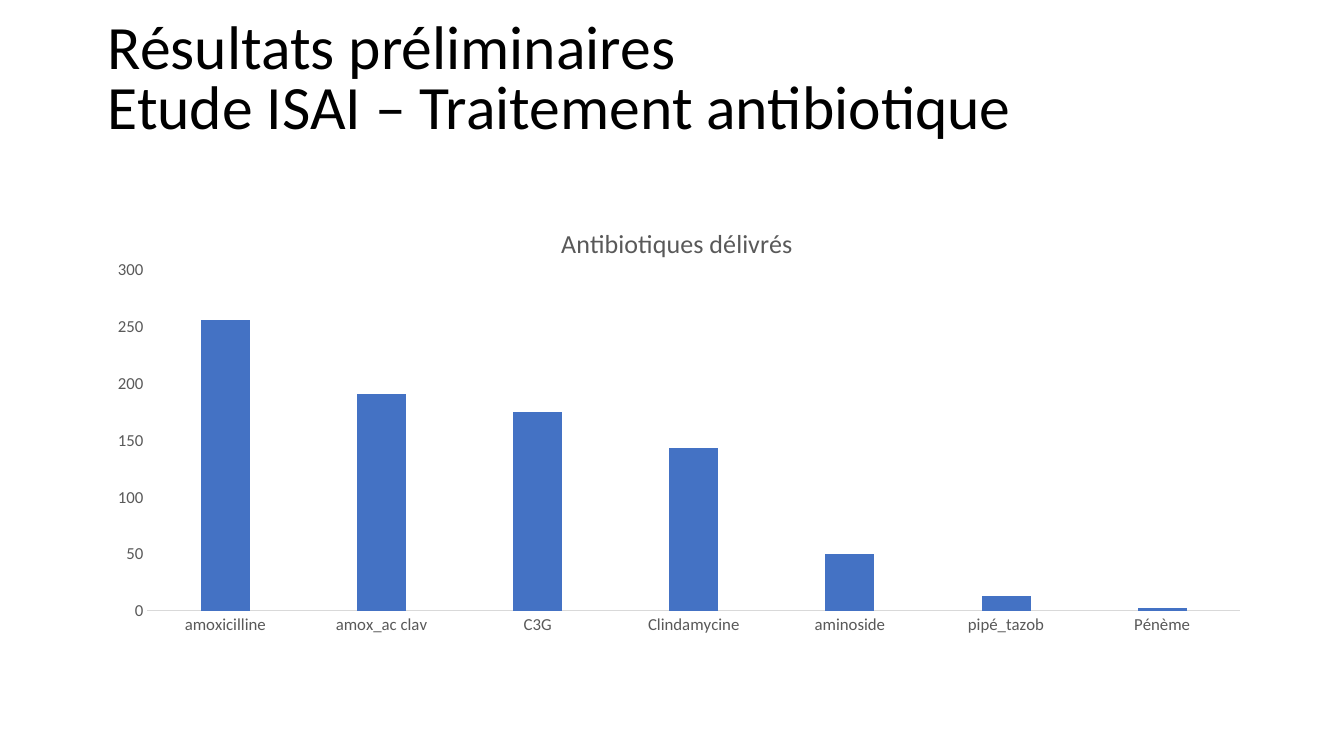
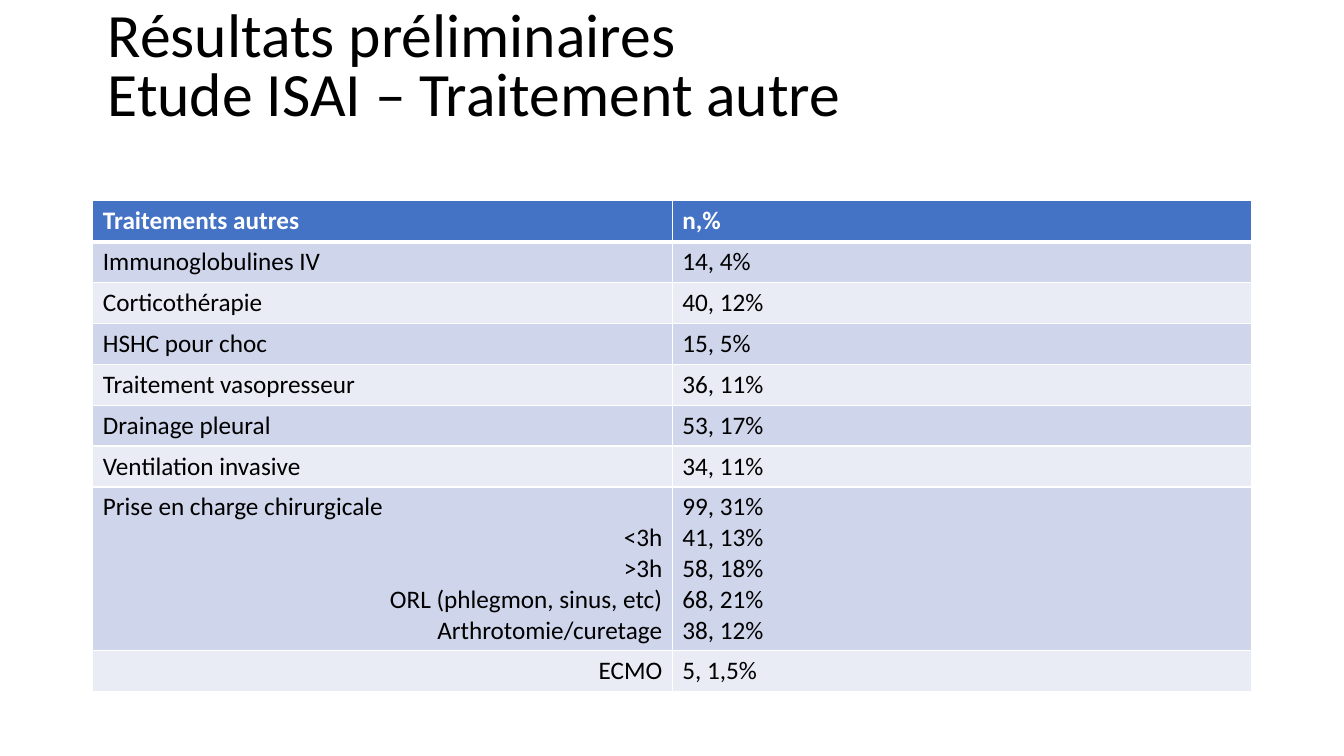
from lxml import etree
from pptx import Presentation
from pptx.chart.data import CategoryChartData
from pptx.dml.color import RGBColor
from pptx.enum.chart import XL_CHART_TYPE as ChartType, XL_TICK_MARK as Tick
from pptx.enum.text import MSO_ANCHOR as Anchor, MSO_AUTO_SIZE as AutoSize, PP_ALIGN as Align
from pptx.oxml import parse_xml
from pptx.oxml.ns import nsdecls, qn
from pptx.util import Cm, Pt

FONT = "Calibri"
COLORS = {
    "text": "000000",
    "white": "FFFFFF",
    "accent": "4472C4",
    "band_dark": "CFD5EA",
    "band_light": "E9EBF5",
    "chart_text": "595959",
    "axis": "D9D9D9",
}
HEADING = "Résultats préliminaires"
CONTENT_LEFT, CONTENT_WIDTH = 2.34, 29.21

ANTIBIOTICS = {
    "amoxicilline": 256,
    "amox_ac clav": 191,
    "C3G": 175,
    "Clindamycine": 143,
    "aminoside": 50,
    "pipé_tazob": 13,
    "Pénème": 2,
}

# Left-aligned labels, right-aligned sub-labels, values
TREATMENTS = [
    (["Traitements autres"], [], ["n,%"]),
    (["Immunoglobulines IV"], [], ["14, 4%"]),
    (["Corticothérapie"], [], ["40, 12%"]),
    (["HSHC pour choc"], [], ["15, 5%"]),
    (["Traitement vasopresseur"], [], ["36, 11%"]),
    (["Drainage pleural"], [], ["53, 17%"]),
    (["Ventilation invasive"], [], ["34, 11%"]),
    (["Prise en charge chirurgicale"],
     ["<3h", ">3h", "ORL (phlegmon, sinus, etc)", "Arthrotomie/curetage"],
     ["99, 31%", "41, 13%", "58, 18%", "68, 21%", "38, 12%"]),
    ([], ["ECMO"], ["5, 1,5%"]),
]


def rgb(name):
    return RGBColor.from_string(COLORS[name])


def style_font(font, size, color, bold=False):
    font.name = FONT
    font.size = Pt(size)
    font.bold = bold
    font.color.rgb = rgb(color)


def add_titled_slide(prs, subject, top):
    s = prs.slides.add_slide(prs.slide_layouts[5])
    title = s.shapes.title
    title.left, title.top = Cm(2.46), Cm(top)
    title.width, title.height = Cm(29.08), Cm(3.56)
    tf = title.text_frame
    tf.word_wrap = True
    tf.auto_size = AutoSize.NONE
    tf.vertical_anchor = Anchor.MIDDLE
    p = tf.paragraphs[0]
    p.alignment = Align.LEFT
    p.line_spacing = 0.8
    for i, line in enumerate((HEADING, f"Etude ISAI – {subject}")):
        if i:
            p.add_line_break()
        r = p.add_run()
        r.text = line
        style_font(r.font, 44, "text")
    return s


def set_layout(parent, index, **fractions):
    """Place a chart part by hand, in fractions of the chart's box."""
    for old in parent.findall(qn("c:layout")):
        parent.remove(old)
    layout = etree.Element(qn("c:layout"))
    manual = etree.SubElement(layout, qn("c:manualLayout"))
    if "w" in fractions:
        etree.SubElement(manual, qn("c:layoutTarget"), val="inner")
    for key in ("xMode", "yMode"):
        etree.SubElement(manual, qn(f"c:{key}"), val="edge")
    for key, value in fractions.items():
        etree.SubElement(manual, qn(f"c:{key}"), val=str(value))
    parent.insert(index, layout)


def add_antibiotics_chart(s, left, top, width, height):
    data = CategoryChartData()
    data.categories = list(ANTIBIOTICS)
    data.add_series("Series 1", list(ANTIBIOTICS.values()))
    chart = s.shapes.add_chart(ChartType.COLUMN_CLUSTERED, Cm(left), Cm(top),
                               Cm(width), Cm(height), data).chart
    style_font(chart.font, 10, "text")
    chart.has_legend = False

    chart.has_title = True
    r = chart.chart_title.text_frame.paragraphs[0].add_run()
    r.text = "Antibiotiques délivrés"
    style_font(r.font, 18.6, "chart_text")
    set_layout(chart.element.xpath(".//c:title")[0], 1, x=0.4, y=0.04)
    set_layout(chart.element.xpath(".//c:plotArea")[0], 0,
               x=0.047, y=0.143, w=0.943, h=0.71)

    for axis in (chart.category_axis, chart.value_axis):
        axis.has_major_gridlines = False
        axis.major_tick_mark = axis.minor_tick_mark = Tick.NONE
        style_font(axis.tick_labels.font, 12, "chart_text")
    line = chart.category_axis.format.line
    line.color.rgb = rgb("axis")
    line.width = Pt(0.75)
    values = chart.value_axis
    values.format.line.fill.background()
    values.minimum_scale, values.maximum_scale, values.major_unit = 0, 300, 50

    plot = chart.plots[0]
    plot.vary_by_categories = False
    plot.gap_width, plot.overlap = 219, -27
    fill = plot.series[0].format.fill
    fill.solid()
    fill.fore_color.rgb = rgb("accent")


def set_borders(cell, top, bottom):
    """Draw white cell borders; top and bottom widths are in points."""
    tc_pr = cell._tc.get_or_add_tcPr()
    widths = {"lnL": 1, "lnR": 1, "lnT": top, "lnB": bottom}
    for i, (side, width) in enumerate(widths.items()):
        tc_pr.insert(i, parse_xml(
            f'<a:{side} {nsdecls("a")} w="{Pt(width)}"><a:solidFill>'
            f'<a:srgbClr val="{COLORS["white"]}"/></a:solidFill></a:{side}>'))


def fill_cell(cell, lines, row):
    """Write (text, alignment) lines in a cell styled for its row."""
    header = row == 0
    band = "accent" if header else "band_dark" if row % 2 else "band_light"
    cell.fill.solid()
    cell.fill.fore_color.rgb = rgb(band)
    set_borders(cell, 3 if row == 1 else 1, 3 if header else 1)
    tf = cell.text_frame
    for i, (text, align) in enumerate(lines):
        p = tf.add_paragraph() if i else tf.paragraphs[0]
        p.alignment = align
        r = p.add_run()
        r.text = text
        style_font(r.font, 18, "white" if header else "text", header)


def add_treatments_table(s, left, top, width):
    row_height, line_height = 1.03, 0.775
    table = s.shapes.add_table(len(TREATMENTS), 2, Cm(left), Cm(top), Cm(width),
                               Cm(row_height * len(TREATMENTS))).table
    table.horz_banding = False
    for column in table.columns:
        column.width = Cm(width / 2)
    for row, (labels, sublabels, values) in enumerate(TREATMENTS):
        table.rows[row].height = Cm(row_height + line_height * (len(values) - 1))
        names = [(t, Align.LEFT) for t in labels] + [(t, Align.RIGHT) for t in sublabels]
        fill_cell(table.cell(row, 0), names, row)
        fill_cell(table.cell(row, 1), [(t, Align.LEFT) for t in values], row)


def main():
    prs = Presentation()
    prs.slide_width, prs.slide_height = Cm(33.87), Cm(19.05)
    s = add_titled_slide(prs, "Traitement antibiotique", 0.28)
    add_antibiotics_chart(s, CONTENT_LEFT, 5.08, CONTENT_WIDTH, 12.09)
    s = add_titled_slide(prs, "Traitement autre", -0.03)
    add_treatments_table(s, CONTENT_LEFT, 5.06, CONTENT_WIDTH)
    prs.save("out.pptx")


if __name__ == "__main__":
    main()
